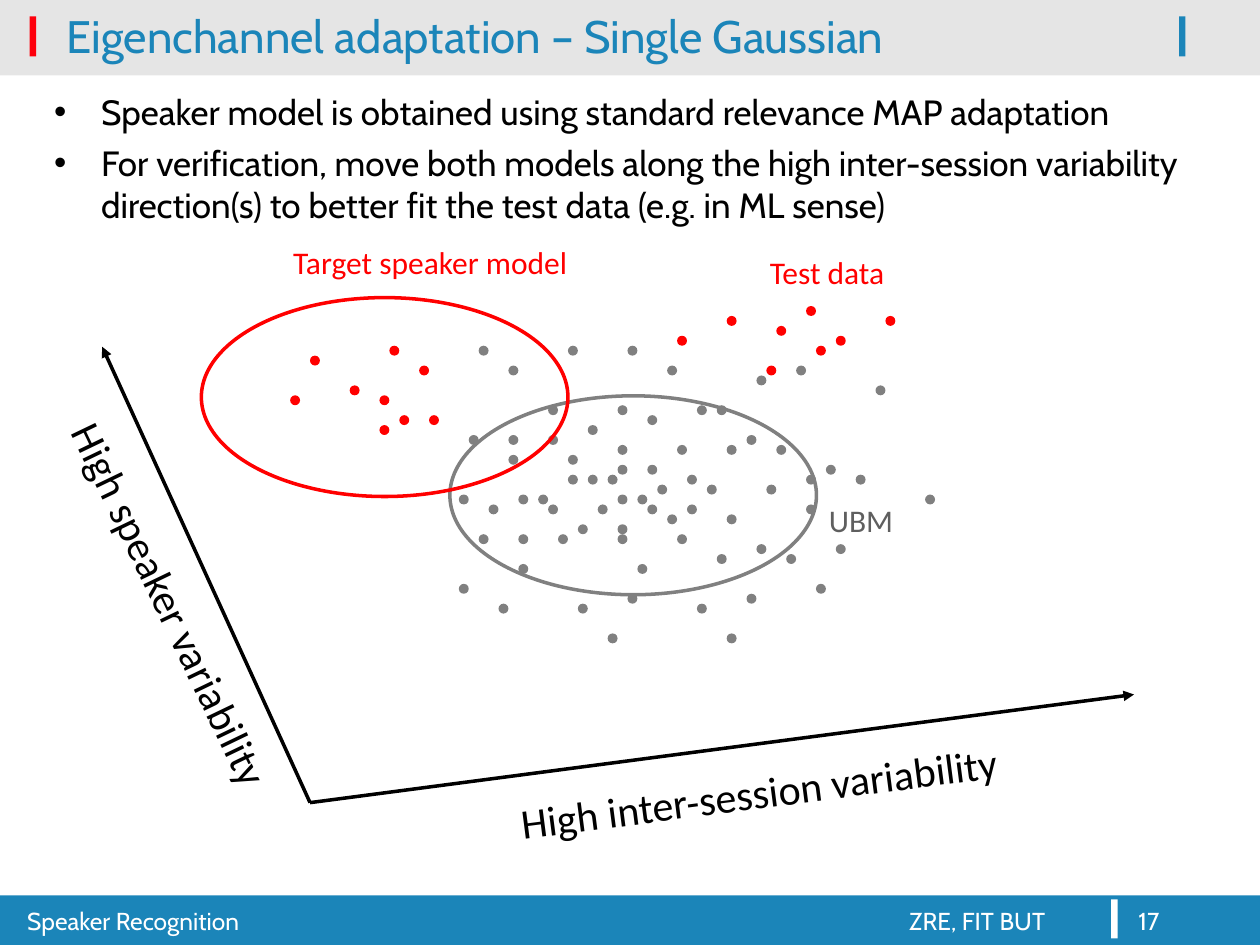
from lxml.etree import SubElement
from pptx import Presentation
from pptx.dml.color import RGBColor
from pptx.enum.shapes import MSO_CONNECTOR, MSO_SHAPE
from pptx.enum.text import MSO_ANCHOR
from pptx.oxml.ns import qn
from pptx.util import Cm, Pt

THEME = {
    "blue": "1B85B9", "accent": "FE000C", "white": "FFFFFF", "black": "000000",
    "red": "FF0000", "gray": "808080", "label_gray": "5F5F5F",
    "heading": "Cabin", "label": "Calibri",
    "title_size": 26, "axis_size": 24, "body_size": 20, "label_size": 18, "footer_size": 14,
    "line_width": 2,
}

BARS = [
    ((0, 1.42, 25.4, 0.1), "black", 10),
    ((0, 18.05, 25.4, 1), "blue", 100),
    ((0, 0, 25.4, 1.42), "black", 10),
    ((0.6, 0.33, 0.13, 0.81), "accent", 100),
    ((23.77, 0.33, 0.13, 0.81), "blue", 100),
    ((22.4, 18.13, 0.13, 0.79), "white", 100),
]

TITLE = "Eigenchannel adaptation – Single Gaussian"
BULLETS = [
    "Speaker model is obtained using standard relevance MAP adaptation",
    "For verification, move both models along the high inter-session variability "
    "direction(s) to better fit the test data (e.g. in ML sense)",
]
FOOTER = "Speaker Recognition\tZRE, FIT BUT"
PAGE = "17"

LABELS = [
    ("High speaker variability", (-0.89, 11.68, 8.79, 1.27), "axis_size", "black", 64.4),
    ("UBM", (16.46, 9.98, 2.6, 1.02), "label_size", "label_gray", 0),
    ("Target speaker model", (5.66, 4.78, 7, 1.02), "label_size", "red", 0),
    ("Test data", (15.27, 4.98, 3.6, 1.02), "label_size", "red", 0),
    ("High inter-session variability", (10.21, 15.32, 10.41, 1.27), "axis_size", "black", 352.6),
]

AXIS_ORIGIN = (6.25, 16.18)
AXIS_ENDS = [(2.06, 6.99), (22.86, 14)]

GRID_LEFT, GRID_TOP, DOT = 9.25, 6.17, 0.2
UBM_DOTS = {
    4: [2, 11, 17], 6: [5, 21, 34], 7: [30], 8: [42], 10: [9, 16, 24, 26],
    11: [19], 12: [13], 13: [1, 5, 9, 29], 14: [16, 22, 27, 32], 15: [5, 11],
    16: [16, 19, 37], 17: [11, 13, 15, 23, 35, 40], 18: [20, 25, 31],
    19: [0, 6, 8, 16, 18, 47], 20: [3, 9, 14, 19, 23, 35], 21: [21, 27],
    22: [12, 16], 23: [2, 6, 10, 16, 22], 24: [30, 38], 25: [26, 33],
    26: [6, 18], 28: [0, 36], 29: [17, 29], 30: [4, 12, 24], 33: [15, 27],
}
TARGET_DOTS = {4: [-7], 5: [-15], 6: [-4], 8: [-11], 9: [-17, -8], 11: [-6, -3], 12: [-8]}
TEST_DOTS = {0: [35], 1: [27, 43], 2: [32], 3: [22, 38], 4: [36], 6: [31]}

MODELS = [
    ((9.07, 7.98, 7.39, 4.01), "gray", UBM_DOTS),
    ((4.06, 6, 7.39, 4.01), "red", TARGET_DOTS),
]


def color(name):
    return RGBColor.from_string(THEME[name])


def add_filled(s, kind, box, fill, opacity=100):
    sp = s.shapes.add_shape(kind, *map(Cm, box))
    sp.shadow.inherit = False
    sp.line.fill.background()
    sp.fill.solid()
    sp.fill.fore_color.rgb = color(fill)
    if opacity < 100:
        clr = sp.fill._xPr.find(".//" + qn("a:srgbClr"))
        SubElement(clr, qn("a:alpha"), val=str(opacity * 1000))


def add_outline(s, box, line):
    sp = s.shapes.add_shape(MSO_SHAPE.OVAL, *map(Cm, box))
    sp.shadow.inherit = False
    sp.fill.background()
    sp.line.color.rgb = color(line)
    sp.line.width = Pt(THEME["line_width"])


def add_dots(s, rows, fill):
    for row, cols in rows.items():
        for col in cols:
            box = (GRID_LEFT + col * DOT, GRID_TOP + row * DOT, DOT, DOT)
            add_filled(s, MSO_SHAPE.OVAL, box, fill)


def add_axis(s, start, end):
    line = s.shapes.add_connector(MSO_CONNECTOR.STRAIGHT, *map(Cm, start + end))
    line.line.color.rgb = color("black")
    line.line.width = Pt(THEME["line_width"])
    SubElement(line.line._get_or_add_ln(), qn("a:tailEnd"), type="triangle", w="med", len="med")
    SubElement(line._element.spPr, qn("a:effectLst"))


def add_text(s, lines, box, font, size, fill, rotation=0, anchor=MSO_ANCHOR.TOP):
    sp = s.shapes.add_textbox(*map(Cm, box))
    sp.rotation = rotation
    tf = sp.text_frame
    for name, value in {"word_wrap": True, "vertical_anchor": anchor}.items():
        setattr(tf, name, value)
    for i, text in enumerate(lines):
        p = tf.paragraphs[0] if i == 0 else tf.add_paragraph()
        r = p.add_run()
        r.text = text
        for name, value in {"name": THEME[font], "size": Pt(THEME[size])}.items():
            setattr(r.font, name, value)
        r.font.color.rgb = color(fill)
    return tf


def add_bullets(s):
    tf = add_text(s, BULLETS, (0.84, 1.7, 23.93, 2.97), "heading", "body_size", "black")
    for i, p in enumerate(tf.paragraphs):
        pPr = p._p.get_or_add_pPr()
        pPr.set("marL", str(Cm(0.95)))
        pPr.set("indent", str(-Cm(0.95)))
        SubElement(pPr, qn("a:buFont"), typeface="Arial")
        SubElement(pPr, qn("a:buChar"), char="•")
        if i:
            p.space_before = Pt(5)


def add_footer(s):
    tf = add_text(s, [FOOTER], (0.3, 18.13, 21.8, 0.92), "heading", "footer_size", "white")
    tabs = SubElement(tf.paragraphs[0]._p.get_or_add_pPr(), qn("a:tabLst"))
    SubElement(tabs, qn("a:tab"), pos=str(Cm(17.78)), algn="l")
    add_text(s, [PAGE], (22.7, 18.13, 2.3, 0.92), "heading", "footer_size", "white")


def main():
    prs = Presentation()
    prs.slide_width, prs.slide_height = Cm(25.4), Cm(19.05)
    s = prs.slides.add_slide(prs.slide_layouts[6])
    for box, fill, opacity in BARS:
        add_filled(s, MSO_SHAPE.RECTANGLE, box, fill, opacity)
    add_text(s, [TITLE], (1.09, -0.28, 22.4, 2), "heading", "title_size", "blue",
             anchor=MSO_ANCHOR.MIDDLE)
    for box, fill, dots in MODELS:
        add_outline(s, box, fill)
        add_dots(s, dots, fill)
    add_dots(s, TEST_DOTS, "red")
    for end in AXIS_ENDS:
        add_axis(s, AXIS_ORIGIN, end)
    for text, box, size, fill, rotation in LABELS:
        add_text(s, [text], box, "label", size, fill, rotation)
    add_bullets(s)
    add_footer(s)
    prs.save("out.pptx")


if __name__ == "__main__":
    main()
